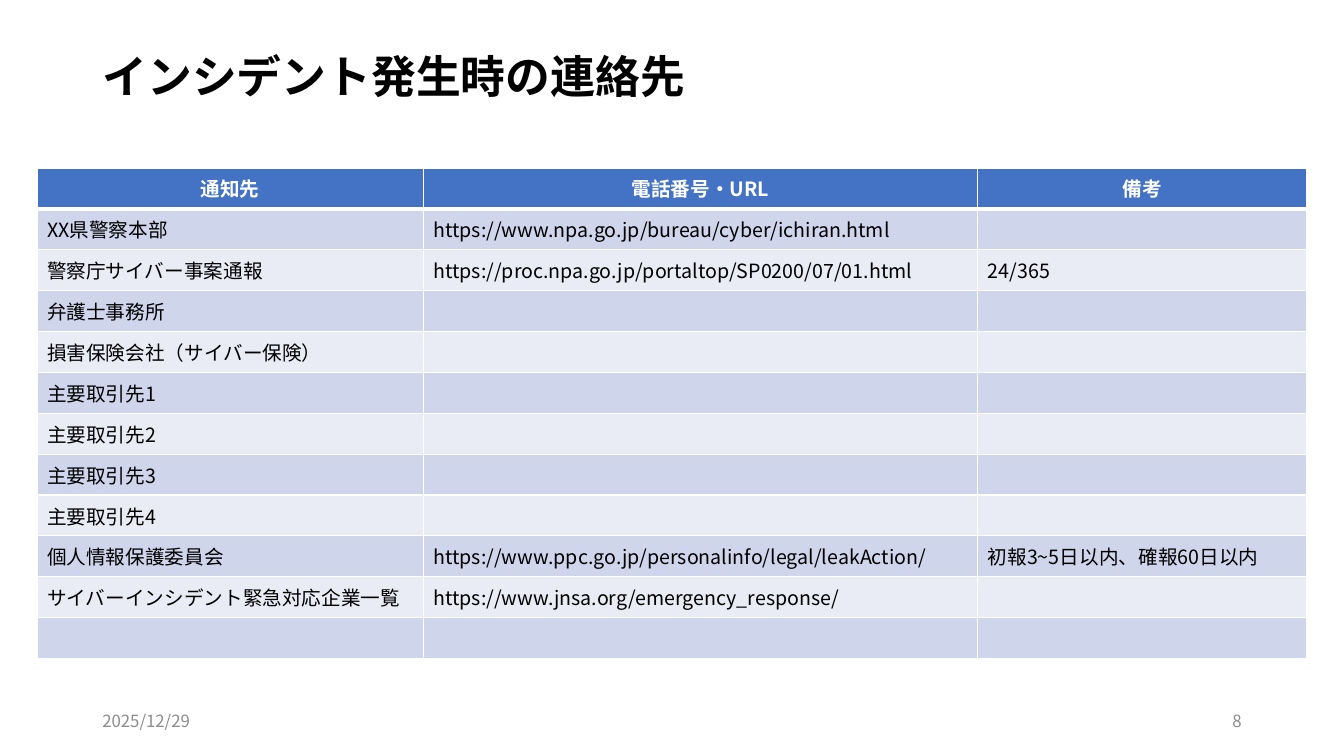
import dataclasses

import lxml.etree
import pptx
import pptx.dml.color
import pptx.enum.text
import pptx.oxml.ns
import pptx.util

RGBColor = pptx.dml.color.RGBColor
ALIGN = pptx.enum.text.PP_ALIGN
MIDDLE = pptx.enum.text.MSO_ANCHOR.MIDDLE

BLACK = RGBColor(0x00, 0x00, 0x00)
WHITE = RGBColor(0xFF, 0xFF, 0xFF)
GREY = RGBColor(0x8C, 0x8C, 0x8C)
HEADER_BLUE = RGBColor(0x44, 0x72, 0xC4)
BANDS = (RGBColor(0xCF, 0xD5, 0xEA), RGBColor(0xE9, 0xEB, 0xF5))
FONT = "Noto Sans CJK JP"

# The slide is a grid of 160 columns by 90 rows of square units
GRID_COLUMNS, GRID_ROWS = 160, 90
UNIT = pptx.util.Inches(1 / 12)


@dataclasses.dataclass(frozen=True)
class Box:
    column: float
    row: float
    columns: float
    rows: float

    def lengths(self) -> tuple[int, ...]:
        return tuple(units(value) for value in dataclasses.astuple(self))


@dataclasses.dataclass(frozen=True)
class FooterItem:
    text: str
    box: Box
    align: ALIGN


@dataclasses.dataclass(frozen=True)
class Contact:
    name: str
    address: str = ""
    remark: str = ""


TITLE = "インシデント発生時の連絡先"
TITLE_BOX = Box(11, 4.8, 138, 9.1)
FOOTER = (
    FooterItem("2025/12/29", Box(11, 83.4, 36, 4.8), ALIGN.LEFT),
    FooterItem("8", Box(113, 83.4, 36, 4.8), ALIGN.RIGHT),
)
COLUMN_UNITS = (46, 66, 39.2)
TABLE_BOX = Box(4.4, 20, sum(COLUMN_UNITS), 58.4)
HEADER = Contact("通知先", "電話番号・URL", "備考")
CONTACTS = (
    Contact("XX県警察本部", "https://www.npa.go.jp/bureau/cyber/ichiran.html"),
    Contact("警察庁サイバー事案通報",
            "https://proc.npa.go.jp/portaltop/SP0200/07/01.html", "24/365"),
    Contact("弁護士事務所"),
    Contact("損害保険会社（サイバー保険）"),
    *(Contact(f"主要取引先{number}") for number in range(1, 5)),
    Contact("個人情報保護委員会",
            "https://www.ppc.go.jp/personalinfo/legal/leakAction/",
            "初報3~5日以内、確報60日以内"),
    Contact("サイバーインシデント緊急対応企業一覧",
            "https://www.jnsa.org/emergency_response/"),
    Contact(""),
)


def units(count: float) -> int:
    return round(count * UNIT)


def add_child(parent, tag: str, **attributes: str):
    return lxml.etree.SubElement(parent, pptx.oxml.ns.qn(tag), **attributes)


def write_text(frame, text: str, *, size: float, color: RGBColor = BLACK,
               bold: bool = False, align: ALIGN = ALIGN.LEFT,
               line_spacing: float = 1.0) -> None:
    paragraph = frame.paragraphs[0]
    paragraph.alignment = align
    paragraph.line_spacing = line_spacing
    if not text:
        # The end mark sets the height of an empty line
        add_child(paragraph._p, "a:endParaRPr", sz=str(round(size * 100)))
        return
    run = paragraph.add_run()
    run.text = text
    run.font.size = pptx.util.Pt(size)
    run.font.bold = bold
    run.font.color.rgb = color
    run.font.name = FONT
    add_child(run._r.get_or_add_rPr(), "a:ea", typeface=FONT)


def draw_borders(cell, bottom_width: float) -> None:
    properties = cell._tc.get_or_add_tcPr()
    widths = {"a:lnL": 1, "a:lnR": 1, "a:lnT": 1, "a:lnB": bottom_width}
    for tag, width in widths.items():
        line = add_child(properties, tag, w=str(pptx.util.Pt(width)))
        add_child(add_child(line, "a:solidFill"), "a:srgbClr", val=str(WHITE))


def draw_title(slide) -> None:
    title = slide.shapes.title
    title.left, title.top, title.width, title.height = TITLE_BOX.lengths()
    frame = title.text_frame
    frame.auto_size = pptx.enum.text.MSO_AUTO_SIZE.NONE
    frame.vertical_anchor = MIDDLE
    write_text(frame, TITLE, size=32, bold=True, line_spacing=0.9)


def draw_footer_item(slide, item: FooterItem) -> None:
    frame = slide.shapes.add_textbox(*item.box.lengths()).text_frame
    frame.word_wrap = True
    frame.vertical_anchor = MIDDLE
    write_text(frame, item.text, size=12, color=GREY, align=item.align)


def draw_contacts(slide) -> None:
    rows = (HEADER, *CONTACTS)
    table = slide.shapes.add_table(
        len(rows), len(COLUMN_UNITS), *TABLE_BOX.lengths()).table
    for column, width in zip(table.columns, COLUMN_UNITS):
        column.width = units(width)
    for index, (row, contact) in enumerate(zip(table.rows, rows)):
        row.height = units(TABLE_BOX.rows / len(rows))
        is_header = index == 0
        for cell, text in zip(row.cells, dataclasses.astuple(contact)):
            draw_borders(cell, bottom_width=3 if is_header else 1)
            cell.fill.solid()
            cell.fill.fore_color.rgb = (
                HEADER_BLUE if is_header else BANDS[(index - 1) % 2])
            cell.vertical_anchor = MIDDLE
            write_text(cell.text_frame, text, size=14, bold=is_header,
                       color=WHITE if is_header else BLACK,
                       align=ALIGN.CENTER if is_header else ALIGN.LEFT)


def main() -> None:
    presentation = pptx.Presentation()
    presentation.slide_width = units(GRID_COLUMNS)
    presentation.slide_height = units(GRID_ROWS)
    title_only = presentation.slide_layouts.get_by_name("Title Only")
    slide = presentation.slides.add_slide(title_only)

    # Title, date and page number, then the contact table
    draw_title(slide)
    for item in FOOTER:
        draw_footer_item(slide, item)
    draw_contacts(slide)

    presentation.save("out.pptx")


if __name__ == "__main__":
    main()
